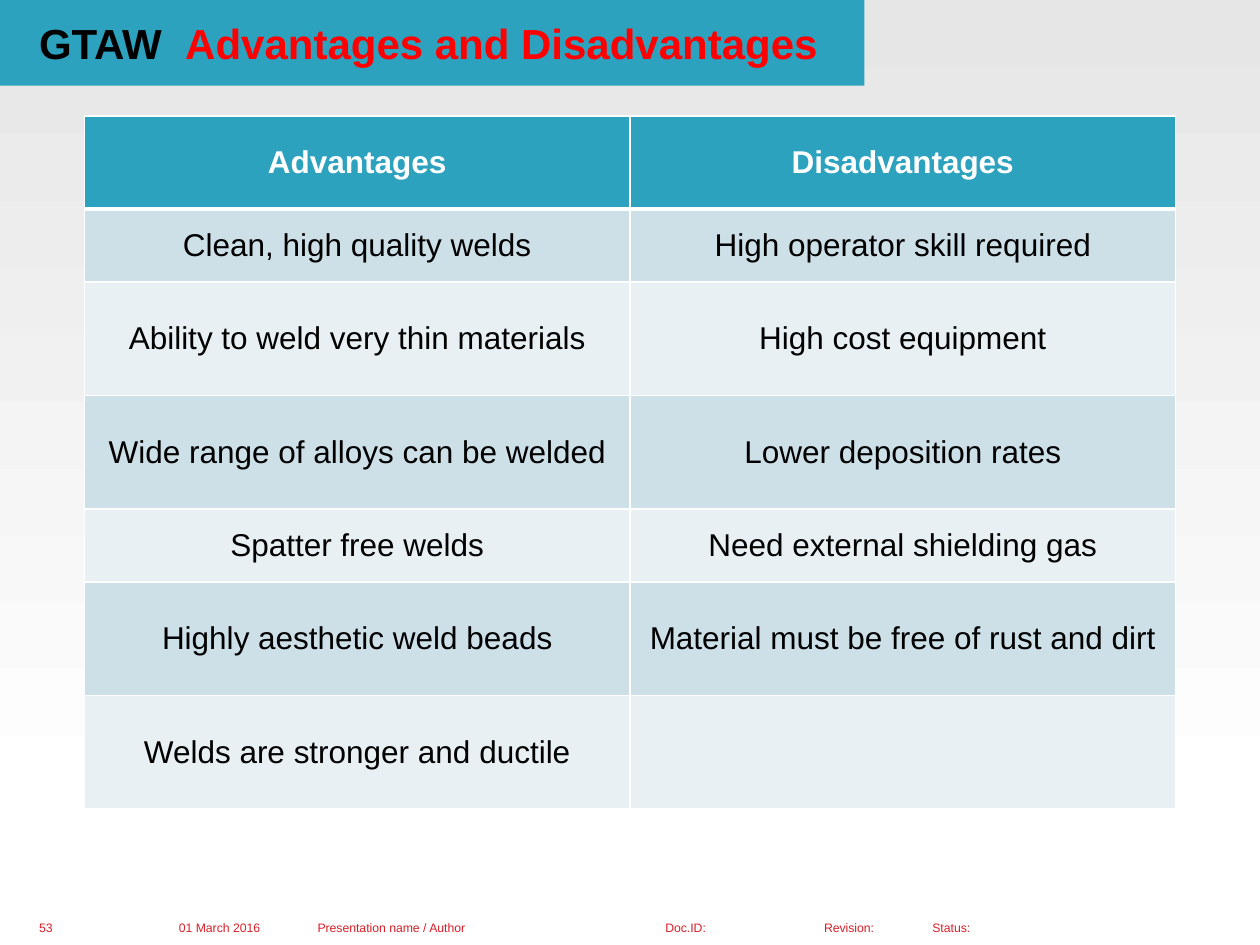
from typing import NamedTuple

from lxml.etree import SubElement
from pptx import Presentation
from pptx.dml.color import RGBColor
from pptx.enum.text import MSO_ANCHOR as Anchor, MSO_AUTO_SIZE as AutoSize, PP_ALIGN as Align
from pptx.oxml.ns import qn
from pptx.util import Inches, Pt

TEAL, WHITE, BLACK, RED = "2DA2BF", "FFFFFF", "000000", "FF0000"
FOOTER_RED = "DA1F28"
BANDS = ("CDE0E8", "E8F0F4")


class FooterItem(NamedTuple):
    text: str
    left: float
    width: float


FOOTER = [
    FooterItem("Doc.ID:", 5.24, 0.45),
    FooterItem("Revision:", 6.5, 0.52),
    FooterItem("Status:", 7.36, 0.45),
    FooterItem("01 March 2016", 1.38, 1.1),
    FooterItem("Presentation name / Author", 2.48, 2.68),
    FooterItem("53", 0.27, 0.39),
]

COMPARISON = [
    ("Advantages", "Disadvantages"),
    ("Clean, high quality welds", "High operator skill required"),
    ("Ability to weld very thin materials", "High cost equipment"),
    ("Wide range of alloys can be welded", "Lower deposition rates"),
    ("Spatter free welds", "Need external shielding gas"),
    ("Highly aesthetic weld beads", "Material must be free of rust and dirt"),
    ("Welds are stronger and ductile", ""),
]
ROW_HEIGHTS = (0.74, 0.58, 0.9, 0.9, 0.58, 0.9, 0.9)
COLUMN_WIDTH = 4.33


def rgb(color: str) -> RGBColor:
    return RGBColor.from_string(color)


def add_text(paragraph, text: str, *, size: float, color: str,
             bold: bool = False, align=Align.LEFT) -> None:
    paragraph.alignment = align
    run = paragraph.add_run()
    run.text = text
    font = run.font
    font.name, font.size, font.bold = "Arial", Pt(size), bold
    font.color.rgb = rgb(color)


def set_margins(target, left: float, top: float, right: float, bottom: float) -> None:
    target.margin_left, target.margin_top = Inches(left), Inches(top)
    target.margin_right, target.margin_bottom = Inches(right), Inches(bottom)


def set_borders(cell, **widths: float) -> None:
    """Draw white cell borders; widths in points are keyed L, R, T and B."""
    properties = cell._tc.get_or_add_tcPr()
    for side, width in widths.items():
        line = SubElement(properties, qn(f"a:ln{side}"), w=str(Pt(width)))
        fill = SubElement(line, qn("a:solidFill"))
        SubElement(fill, qn("a:srgbClr"), val=WHITE)


def paint_background(slide) -> None:
    fill = slide.background.fill
    fill.gradient()
    fill.gradient_angle = 270
    for stop, position, color in zip(fill.gradient_stops, (0, 0.85), ("E6E6E6", WHITE)):
        stop.position = position
        stop.color.rgb = rgb(color)


def add_footer_item(slide, item: FooterItem) -> None:
    box = slide.shapes.add_textbox(Inches(item.left), Inches(7.29),
                                   Inches(item.width), Inches(0.16))
    frame = box.text_frame
    frame.word_wrap = True
    frame.vertical_anchor = Anchor.MIDDLE
    set_margins(frame, 0.04, 0.04, 0, 0.06)
    add_text(frame.paragraphs[0], item.text, size=7, color=FOOTER_RED)


def format_title(title) -> None:
    title.left, title.top = Inches(0), Inches(0)
    title.width, title.height = Inches(6.86), Inches(0.68)
    title.fill.solid()
    title.fill.fore_color.rgb = rgb(TEAL)
    frame = title.text_frame
    frame.word_wrap = True
    frame.auto_size = AutoSize.NONE
    frame.vertical_anchor = Anchor.TOP
    set_margins(frame, 0.31, 0.14, 0.1, 0.14)
    for text, color in (("GTAW  ", BLACK), ("Advantages and Disadvantages", RED)):
        add_text(frame.paragraphs[0], text, size=24, color=color, bold=True)


def add_comparison(slide) -> None:
    columns = len(COMPARISON[0])
    table = slide.shapes.add_table(
        len(COMPARISON), columns, Inches(0.67), Inches(0.92),
        Inches(COLUMN_WIDTH * columns), Inches(sum(ROW_HEIGHTS))).table
    for column in table.columns:
        column.width = Inches(COLUMN_WIDTH)
    for index, (texts, height) in enumerate(zip(COMPARISON, ROW_HEIGHTS)):
        row = table.rows[index]
        row.height = Inches(height)
        header = index == 0
        for cell, text in zip(row.cells, texts):
            set_borders(cell, L=1, R=1, T=3 if index == 1 else 1, B=3 if header else 1)
            cell.fill.solid()
            cell.fill.fore_color.rgb = rgb(TEAL if header else BANDS[(index - 1) % 2])
            cell.vertical_anchor = Anchor.MIDDLE
            set_margins(cell, 0.01, 0.01, 0.01, 0.01)
            if text:
                add_text(cell.text_frame.paragraphs[0], text, size=18, bold=header,
                         color=WHITE if header else BLACK, align=Align.CENTER)


def main() -> None:
    deck = Presentation()
    deck.slide_width, deck.slide_height = Inches(10), Inches(7.5)
    slide = deck.slides.add_slide(deck.slide_layouts[5])
    paint_background(slide)
    format_title(slide.shapes.title)
    for item in FOOTER:
        add_footer_item(slide, item)
    add_comparison(slide)
    deck.save("out.pptx")


if __name__ == "__main__":
    main()
